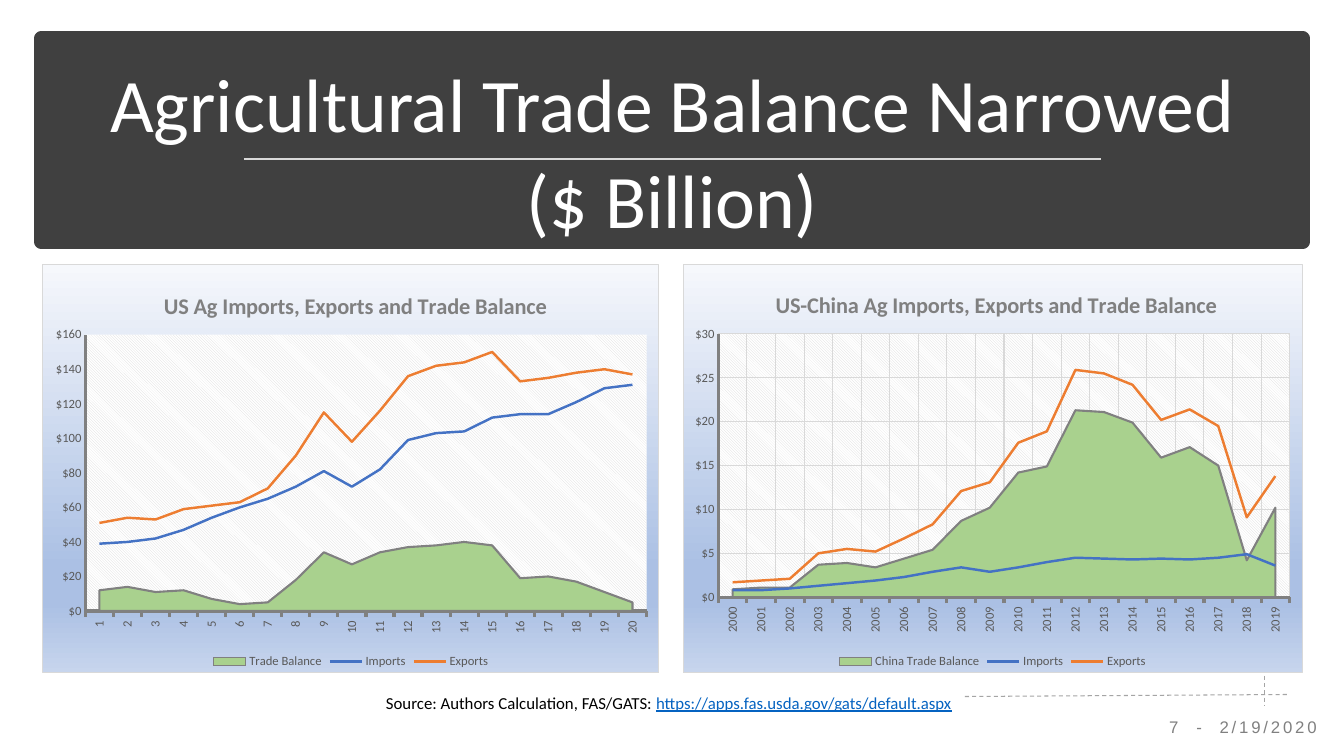
from pptx import Presentation
from pptx.chart.data import CategoryChartData
from pptx.dml.color import RGBColor
from pptx.enum.chart import XL_CHART_TYPE as CT, XL_LEGEND_POSITION as LP
from pptx.enum.chart import XL_MARKER_STYLE as MS, XL_TICK_MARK as TM
from pptx.enum.dml import MSO_LINE
from pptx.enum.shapes import MSO_CONNECTOR, MSO_SHAPE
from pptx.enum.text import MSO_ANCHOR, PP_ALIGN
from pptx.oxml import parse_xml
from pptx.oxml.ns import nsdecls, qn
from pptx.util import Inches, Pt

WHITE = RGBColor(0xFF, 0xFF, 0xFF)
BLACK = RGBColor(0, 0, 0)
BANNER = RGBColor(0x40, 0x40, 0x40)
LABEL = RGBColor(0x59, 0x59, 0x59)
GRAY = RGBColor(0x80, 0x80, 0x80)
DASH = RGBColor(0xA5, 0xA5, 0xA5)
PALE = RGBColor(0xD9, 0xD9, 0xD9)
LINK = RGBColor(0x05, 0x63, 0xC1)
GREEN = RGBColor(0xA9, 0xD1, 0x8E)
BLUE = RGBColor(0x44, 0x72, 0xC4)
ORANGE = RGBColor(0xED, 0x7D, 0x31)
SKY_TOP = RGBColor(0xF6, 0xF8, 0xFC)
SKY_MID = RGBColor(0xAB, 0xC0, 0xE4)
SKY_LOW = RGBColor(0xC7, 0xD5, 0xED)

prs = Presentation()
prs.slide_width, prs.slide_height = Inches(13.33), Inches(7.5)
s = prs.slides.add_slide(prs.slide_layouts[6])


def add_text(text, x, y, w, h, size=12, font="Calibri", color=BLACK, align=PP_ALIGN.CENTER,
             anchor=MSO_ANCHOR.BOTTOM, spacing=0.9, wrap=True):
    tf = s.shapes.add_textbox(Inches(x), Inches(y), Inches(w), Inches(h)).text_frame
    tf.word_wrap, tf.vertical_anchor = wrap, anchor
    p = tf.paragraphs[0]
    p.alignment, p.line_spacing = align, spacing
    r = p.add_run()
    r.text = text
    r.font.size, r.font.name, r.font.color.rgb = Pt(size), font, color
    return p


def manual_layout(x, y, w=None, h=None):
    inner = '<c:layoutTarget val="inner"/>' if w else ""
    modes = '<c:xMode val="edge"/><c:yMode val="edge"/>'
    sides = "".join(f'<c:{k} val="{v}"/>' for k, v in zip("xywh", (x, y, w, h)) if v)
    return parse_xml(f'<c:layout {nsdecls("c")}><c:manualLayout>{inner}{modes}{sides}'
                     '</c:manualLayout></c:layout>')


# Banner
banner = s.shapes.add_shape(MSO_SHAPE.RECTANGLE, Inches(0.41), Inches(0.38), Inches(12.51), Inches(2.02))
banner.shadow.inherit = False
banner.fill.solid()
banner.fill.fore_color.rgb = BANNER
banner.line.color.rgb = BANNER
banner.line.width = Pt(10)

# Title rule and dashed guide lines
for x1, y1, x2, y2, color, width, dash in [
    (2.42, 1.58, 10.92, 1.58, PALE, 1.75, None),
    (12.54, 4.7, 12.54, 7, DASH, 0.75, MSO_LINE.DASH),
    (9.57, 6.91, 12.77, 6.89, DASH, 0.75, MSO_LINE.DASH),
]:
    line = s.shapes.add_connector(MSO_CONNECTOR.STRAIGHT, Inches(x1), Inches(y1), Inches(x2), Inches(y2))
    line.line.color.rgb = color
    line.line.width = Pt(width)
    line.line.dash_style = dash
    line._element.spPr.append(parse_xml(f'<a:effectLst {nsdecls("a")}/>'))

# Title lines
for text, y in [("Agricultural Trade Balance Narrowed", 0.51), ("($ Billion)", 1.46)]:
    add_text(text, 0.58, y, 12.18, 1.02, size=54, color=WHITE)

# Charts: balance as area, imports and exports as lines
us = dict(
    title="US Ag Imports, Exports and Trade Balance", x=0.42, w=6.12, top=160, unit=20, grid=False,
    cats=range(1, 21), title_at=(0.19, 0.055), plot_at=(0.069, 0.172, 0.911, 0.677),
    series={
        "Trade Balance": [12, 14, 11, 12, 7, 4, 5, 18, 34, 27, 34, 37, 38, 40, 38, 19, 20, 17, 11, 5],
        "Imports": [39, 40, 42, 47, 54, 60, 65, 72, 81, 72, 82, 99, 103, 104, 112, 114, 114, 121, 129, 131],
        "Exports": [51, 54, 53, 59, 61, 63, 71, 90, 115, 98, 116, 136, 142, 144, 150, 133, 135, 138, 140, 137],
    })
china = dict(
    title="US-China Ag Imports, Exports and Trade Balance", x=6.77, w=6.15, top=30, unit=5, grid=True,
    cats=range(2000, 2020), title_at=(0.143, 0.053), plot_at=(0.057, 0.17, 0.923, 0.645),
    series={
        "China Trade Balance": [0.9, 1.1, 1.1, 3.7, 3.9, 3.4, 4.4, 5.4, 8.7, 10.2,
                                14.2, 14.9, 21.3, 21.1, 19.9, 15.9, 17.1, 15, 4.2, 10.2],
        "Imports": [0.8, 0.8, 1, 1.3, 1.6, 1.9, 2.3, 2.9, 3.4, 2.9,
                    3.4, 4, 4.5, 4.4, 4.3, 4.4, 4.3, 4.5, 4.9, 3.6],
        "Exports": [1.7, 1.9, 2.1, 5, 5.5, 5.2, 6.7, 8.3, 12.1, 13.1,
                    17.6, 18.9, 25.9, 25.5, 24.2, 20.2, 21.4, 19.5, 9.1, 13.8],
    })
stops = "".join(f'<a:gs pos="{pos * 1000}"><a:srgbClr val="{c}"/></a:gs>'
                for pos, c in [(0, SKY_TOP), (74, SKY_MID), (83, SKY_MID), (100, SKY_LOW)])

for d in (us, china):
    data = CategoryChartData()
    data.categories = [str(c) for c in d["cats"]]
    for name, values in d["series"].items():
        data.add_series(name, values)
    chart = s.shapes.add_chart(CT.AREA, Inches(d["x"]), Inches(2.62), Inches(d["w"]), Inches(4.06), data).chart
    chart.font.size, chart.font.name, chart.font.color.rgb = Pt(10), "Calibri", BLACK

    # Move the last two series to a line plot on the same axes
    plot_area = chart._chartSpace.chart.plotArea
    area = plot_area.find(qn("c:areaChart"))
    ids = "".join(f'<c:axId val="{a.get("val")}"/>' for a in area.findall(qn("c:axId")))
    lines = parse_xml(f'<c:lineChart {nsdecls("c")}><c:grouping val="standard"/>'
                      f'<c:varyColors val="0"/><c:marker val="1"/>{ids}</c:lineChart>')
    area.addnext(lines)
    for ser in area.findall(qn("c:ser")):
        for flag in ser.findall(qn("c:invertIfNegative")):
            ser.remove(flag)
    for ser in area.findall(qn("c:ser"))[1:]:
        lines.find(qn("c:marker")).addprevious(ser)
    area_plot, line_plot = chart.plots
    area_plot.vary_by_categories = False
    balance = area_plot.series[0].format
    balance.fill.solid()
    balance.fill.fore_color.rgb = GREEN
    balance.line.color.rgb = GRAY
    balance.line.width = Pt(1.5)
    for ser, color in zip(line_plot.series, (BLUE, ORANGE)):
        ser.format.line.color.rgb = color
        ser.format.line.width = Pt(1.75)
        ser.marker.style = MS.NONE
        ser.smooth = False

    # Axes
    cat, val = chart.category_axis, chart.value_axis
    for axis, width, tick in [(cat, 2.25, TM.OUTSIDE), (val, 2, TM.NONE)]:
        axis.format.line.color.rgb = GRAY
        axis.format.line.width = Pt(width)
        axis.major_tick_mark, axis.minor_tick_mark = tick, TM.NONE
        font = axis.tick_labels.font
        font.size, font.name, font.color.rgb = Pt(9), "Calibri", LABEL
        axis.has_major_gridlines = d["grid"]
        if d["grid"]:
            axis.major_gridlines.format.line.color.rgb = PALE
            axis.major_gridlines.format.line.width = Pt(0.75)
    cat._element.find(qn("c:txPr")).find(qn("a:bodyPr")).set("rot", "-5400000")
    val._element.find(qn("c:crossBetween")).set("val", "between")
    val.minimum_scale, val.maximum_scale, val.major_unit = 0, d["top"], d["unit"]
    val.tick_labels.number_format = '"$"#,##0'
    val.tick_labels.number_format_is_linked = False

    # Title and legend
    chart.has_title = True
    title = chart.chart_title
    title.text_frame.text = d["title"]
    font = title.text_frame.paragraphs[0].runs[0].font
    font.size, font.bold, font.name, font.color.rgb = Pt(16), True, "Calibri", GRAY
    chart.has_legend = True
    chart.legend.position, chart.legend.include_in_layout = LP.BOTTOM, False
    font = chart.legend.font
    font.size, font.name, font.color.rgb = Pt(9), "Calibri", LABEL

    # Placement of title and plot
    for old in title._element.findall(qn("c:layout")):
        title._element.remove(old)
    title._element.find(qn("c:tx")).addnext(manual_layout(*d["title_at"]))
    for old in plot_area.findall(qn("c:layout")):
        plot_area.remove(old)
    plot_area.insert(0, manual_layout(*d["plot_at"]))

    # Hatched plot on a gradient panel
    plot_area.append(parse_xml(
        f'<c:spPr {nsdecls("c", "a")}><a:pattFill prst="ltDnDiag"><a:fgClr><a:srgbClr val="{PALE}"/></a:fgClr>'
        f'<a:bgClr><a:srgbClr val="{WHITE}"/></a:bgClr></a:pattFill></c:spPr>'))
    chart._chartSpace.chart.addnext(parse_xml(
        f'<c:spPr {nsdecls("c", "a")}><a:gradFill><a:gsLst>{stops}</a:gsLst><a:lin ang="5400000"/></a:gradFill>'
        f'<a:ln w="{Pt(0.75)}"><a:solidFill><a:srgbClr val="{PALE}"/></a:solidFill></a:ln></c:spPr>'))

# Source line
p = add_text("Source: Authors Calculation, FAS/GATS: ", 3.73, 6.82, 5.87, 0.3,
             align=PP_ALIGN.LEFT, anchor=MSO_ANCHOR.TOP, spacing=1.0, wrap=False)
r = p.add_run()
r.text = "https://apps.fas.usda.gov/gats/default.aspx"
r.font.size, r.font.name, r.font.color.rgb, r.font.underline = Pt(12), "Calibri", LINK, True

# Page number and date
p = add_text("7  -  2/19/2020", 11.33, 7.07, 2, 0.3, font="Arial", color=GRAY, anchor=MSO_ANCHOR.MIDDLE)
p.space_before = Pt(10)
p.runs[0].font._element.set("spc", "200")

prs.save("out.pptx")
